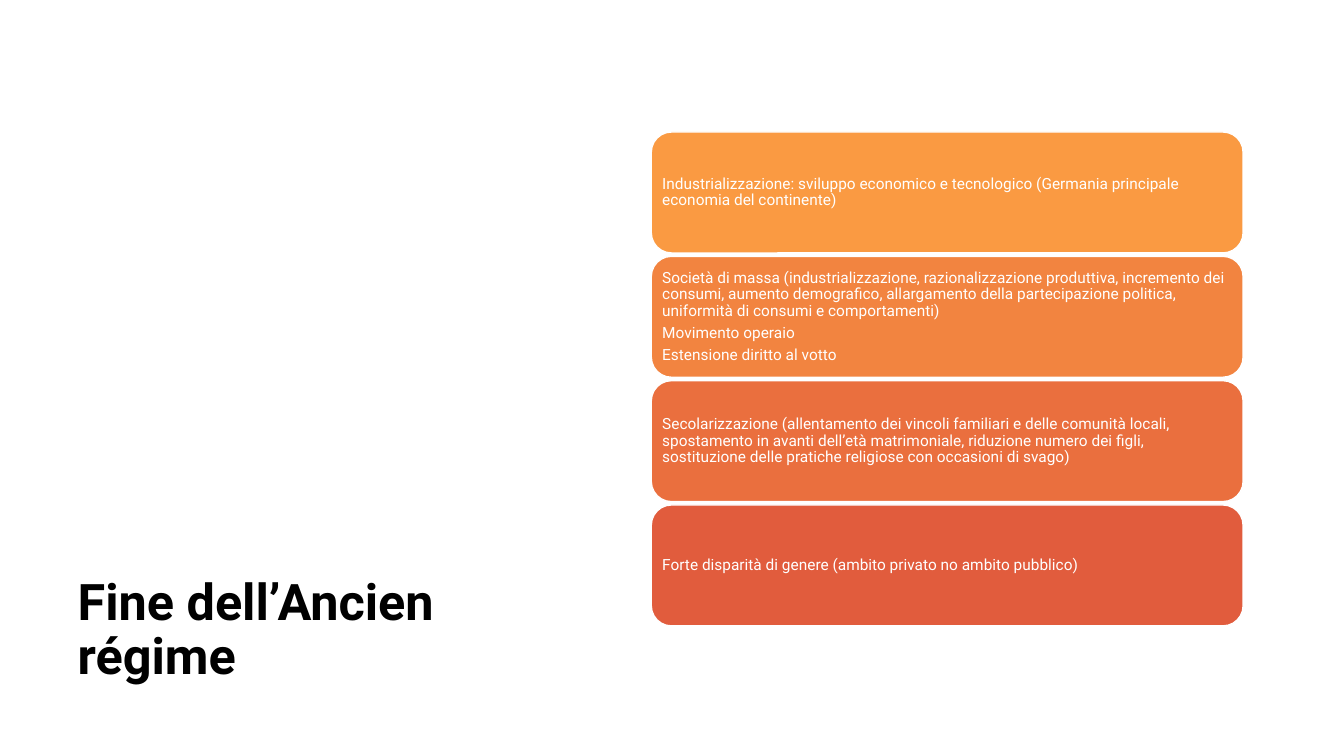
from dataclasses import dataclass

from pptx import Presentation
from pptx.dml.color import RGBColor
from pptx.enum.shapes import MSO_SHAPE
from pptx.enum.text import MSO_ANCHOR, MSO_AUTO_SIZE, PP_ALIGN
from pptx.util import Inches, Pt


@dataclass(frozen=True)
class Theme:
    """Colours and type of the slide."""
    font: str = "Roboto"
    ink: str = "000000"
    paper: str = "FFFFFF"
    title_size: int = 36
    card_size: int = 11
    card_space: float = 3.85


THEME = Theme()
CARDS = [
    ("FA9A42", ["Industrializzazione: sviluppo economico e tecnologico (Germania "
                "principale economia del continente)"]),
    ("F28440", ["Società di massa (industrializzazione, razionalizzazione produttiva, "
                "incremento dei consumi, aumento demografico, allargamento della "
                "partecipazione politica, uniformità di consumi e comportamenti)",
                "Movimento operaio",
                "Estensione diritto al votto"]),
    ("EA6F3E", ["Secolarizzazione (allentamento dei vincoli familiari e delle comunità "
                "locali, spostamento in avanti dell’età matrimoniale, riduzione numero "
                "dei figli, sostituzione delle pratiche religiose con occasioni di svago)"]),
    ("E15C3D", ["Forte disparità di genere (ambito privato no ambito pubblico)"]),
]
CARD_LEFT, CARD_WIDTH, CARD_HEIGHT = 6.46, 5.87, 1.2
STACK_TOP, STACK_BOTTOM = 1.31, 6.21


def apply(obj, values):
    """Set attributes of an object from a dict."""
    for name, value in values.items():
        setattr(obj, name, value)


def write(tf, lines, size, color, space=0, bold=False):
    """Fill a text frame with one formatted paragraph per line."""
    for i, line in enumerate(lines):
        p = tf.add_paragraph() if i else tf.paragraphs[0]
        apply(p, {"alignment": PP_ALIGN.LEFT, "line_spacing": 0.9,
                  "space_before": Pt(0), "space_after": Pt(space)})
        r = p.add_run()
        r.text = line
        apply(r.font, {"name": THEME.font, "size": Pt(size), "bold": bold})
        r.font.color.rgb = RGBColor.from_string(color)


def add_title(s, text):
    """Place the title at the lower left."""
    sp = s.shapes.title
    apply(sp, {"left": Inches(0.67), "top": Inches(0.6),
               "width": Inches(4.26), "height": Inches(6.25)})
    apply(sp.text_frame, {"word_wrap": True, "auto_size": MSO_AUTO_SIZE.NONE,
                          "vertical_anchor": MSO_ANCHOR.BOTTOM})
    write(sp.text_frame, [text], THEME.title_size, THEME.ink, bold=True)


def add_card(s, top, fill, lines):
    """Add one rounded card with its text."""
    sp = s.shapes.add_shape(MSO_SHAPE.ROUNDED_RECTANGLE, Inches(CARD_LEFT), Inches(top),
                            Inches(CARD_WIDTH), Inches(CARD_HEIGHT))
    sp.shadow.inherit = False
    sp.fill.solid()
    sp.fill.fore_color.rgb = RGBColor.from_string(fill)
    sp.line.color.rgb = RGBColor.from_string(THEME.paper)
    sp.line.width = Pt(1)
    inset = Inches(0.05)
    apply(sp.text_frame, {"word_wrap": True, "vertical_anchor": MSO_ANCHOR.MIDDLE,
                          "margin_left": inset, "margin_right": inset,
                          "margin_top": inset, "margin_bottom": inset})
    write(sp.text_frame, lines, THEME.card_size, THEME.paper, THEME.card_space)


def main():
    """Build and save the slide."""
    prs = Presentation()
    apply(prs, {"slide_width": Inches(13.33), "slide_height": Inches(7.5)})
    s = prs.slides.add_slide(prs.slide_layouts[5])
    add_title(s, "Fine dell’Ancien régime")
    pitch = (STACK_BOTTOM - STACK_TOP - CARD_HEIGHT) / (len(CARDS) - 1)
    for i, (fill, lines) in enumerate(CARDS):
        add_card(s, STACK_TOP + i * pitch, fill, lines)
    prs.save("out.pptx")


if __name__ == "__main__":
    main()
